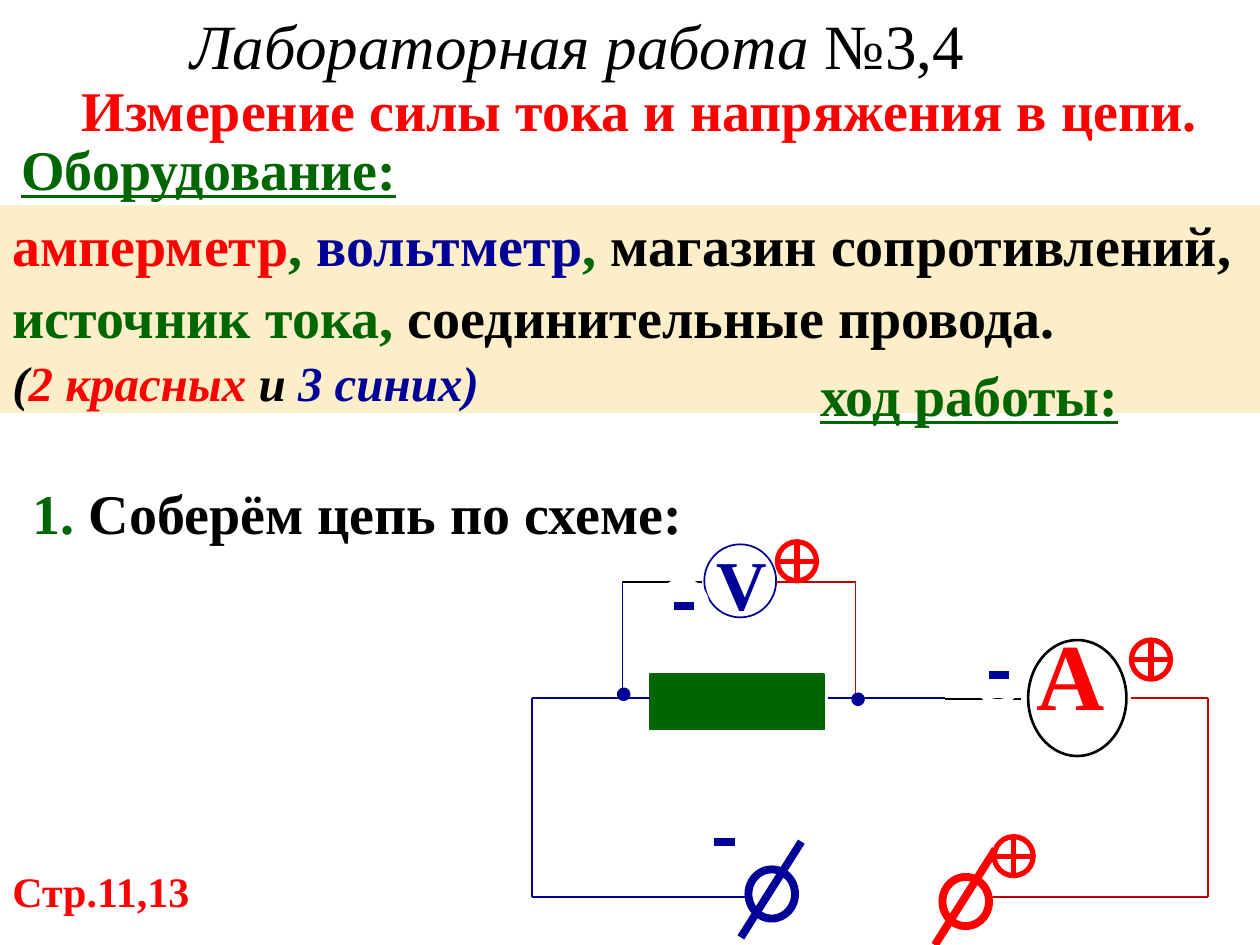
from pptx import Presentation
from pptx import util as u
from pptx.dml.color import RGBColor
from pptx.enum import shapes, text
from pptx.oxml.ns import qn
from lxml import etree

FONT = "Times New Roman"
COLORS = {"black": "000000", "white": "FFFFFF", "red": "FF0000", "wire": "C00000",
          "green": "006600", "blue": "000099", "cream": "FBEEC9"}
OVAL = shapes.MSO_SHAPE.OVAL
RECT = shapes.MSO_SHAPE.RECTANGLE


def color(name):
    return RGBColor.from_string(COLORS[name])


def add_runs(para, runs, size, bold=True, italic=False, underline=False):
    """Add (words, colour) pairs as runs of one style."""
    for words, name in runs:
        span = para.add_run()
        span.text = words
        font = span.font
        font.name, font.size = FONT, u.Pt(size)
        font.bold, font.italic, font.underline = bold, italic, underline
        font.color.rgb = color(name)


def add_label(page, box, runs, size, wrap=False, **style):
    label = page.shapes.add_textbox(*map(u.Inches, box))
    label.text_frame.word_wrap = wrap
    add_runs(label.text_frame.paragraphs[0], runs, size, **style)


def add_figure(page, kind, box, fill=None, line=None, width=1):
    figure = page.shapes.add_shape(kind, *map(u.Inches, box))
    figure.shadow.inherit = False
    if fill:
        figure.fill.solid()
        figure.fill.fore_color.rgb = color(fill)
    else:
        figure.fill.background()
    if line:
        figure.line.color.rgb = color(line)
        figure.line.width = u.Pt(width)
    else:
        figure.line.fill.background()
    return figure


def add_wire(page, start, end, name, width=1):
    wire = page.shapes.add_connector(
        shapes.MSO_CONNECTOR.STRAIGHT, *map(u.Inches, (*start, *end)))
    wire.line.color.rgb = color(name)
    wire.line.width = u.Pt(width)
    etree.SubElement(wire._element.spPr, qn("a:effectLst"))


def add_title(page, box):
    title = page.shapes.title
    title.left, title.top, title.width, title.height = map(u.Inches, box)
    frame = title.text_frame
    frame.word_wrap = False
    frame.auto_size = text.MSO_AUTO_SIZE.NONE
    frame.vertical_anchor = text.MSO_ANCHOR.TOP
    para = frame.paragraphs[0]
    para.alignment = text.PP_ALIGN.LEFT
    add_runs(para, [("Лабораторная работа ", "black")], 36, bold=False, italic=True)
    add_runs(para, [("№3,4", "black")], 36, bold=False)


def add_equipment(page, box):
    frame = add_figure(page, RECT, box, "cream").text_frame
    frame.word_wrap = True
    frame.vertical_anchor = text.MSO_ANCHOR.MIDDLE
    devices, wires = frame.paragraphs[0], frame.add_paragraph()
    for para in (devices, wires):
        para.alignment = text.PP_ALIGN.LEFT
        para.line_spacing = 1.06
    add_runs(devices, [("амперметр", "red"), (", ", "green"), ("вольтметр", "blue"),
                       (", ", "green"), ("магазин сопротивлений, ", "black"),
                       ("источник тока, ", "green"),
                       ("соединительные провода.", "black")], 32)
    add_runs(wires, [("(", "black"), ("2 красных", "red"), (" и ", "black"),
                     ("3 синих)", "blue")], 28, italic=True)


def add_plus(page, left, top):
    add_figure(page, shapes.MSO_SHAPE.FLOWCHART_OR, (left, top, 0.31, 0.31),
               "white", "red", 3)


def add_minus(page, left, top):
    """Draw a minus inside a white ring that clears the wire around it."""
    add_wire(page, (left + 0.12, top + 0.2), (left + 0.28, top + 0.2), "blue", 4.5)
    add_figure(page, OVAL, (left, top, 0.38, 0.41), line="white", width=3)


def add_terminal(page, left, top, name):
    add_figure(page, OVAL, (left + 0.06, top + 0.22, 0.37, 0.39), "white", name, 4.5)
    add_wire(page, (left, top + 0.76), (left + 0.48, top), name, 4.5)


def add_main_loop(page, box):
    """Draw the resistor, ammeter and source around the loop's outline."""
    left, top, width, height = box
    right, bottom = left + width, top + height
    add_figure(page, RECT, (left + 0.94, top - 0.19, 1.38, 0.44), "green", "green")
    add_label(page, (left + 3.91, top - 0.7, 1.5, 1.0), [("А", "red")], 54)
    add_figure(page, OVAL, (left + 3.94, top - 0.46, 0.78, 0.92), line="black", width=1.5)
    for start, end, name in [
            ((left, top), (left + 0.94, top), "blue"),
            ((left + 2.35, top), (left + 3.28, top), "blue"),
            ((left + 3.28, top + 0.01), (left + 3.88, top + 0.01), "black"),
            ((left + 4.76, top), (right, top), "wire"),
            ((right, top), (right, bottom), "wire"),
            ((left, top), (left, bottom), "blue"),
            ((left + 3.44, bottom), (right, bottom), "wire"),
            ((left, bottom), (left + 1.93, bottom), "blue")]:
        add_wire(page, start, end, name)
    add_terminal(page, left + 3.2, bottom - 0.38, "red")
    add_terminal(page, left + 1.66, bottom - 0.44, "blue")
    add_plus(page, left + 3.67, bottom - 0.48)
    add_plus(page, left + 4.76, top - 0.46)
    add_minus(page, left + 1.33, bottom - 0.64)
    add_minus(page, left + 3.51, top - 0.38)


def add_voltmeter(page, box):
    """Draw the voltmeter branch, joined to the loop at its two lower corners."""
    left, top, width, height = box
    right, bottom = left + width, top + height
    add_label(page, (left + 0.65, top - 0.38, 0.98, 0.92), [("V", "blue")], 40)
    add_figure(page, OVAL, (left + 0.65, top - 0.3, 0.57, 0.58), line="blue")
    for start, end, name in [
            ((left + 1.22, top), (right, top), "wire"),
            ((left, top), (left + 0.63, top), "black"),
            ((left, top), (left, bottom), "blue"),
            ((right, top), (right, bottom), "wire")]:
        add_wire(page, start, end, name)
    for node in ((left - 0.03, bottom - 0.09), (right - 0.02, bottom - 0.05)):
        add_figure(page, OVAL, (*node, 0.08, 0.08), "blue", "blue", 2)
    add_plus(page, left + 1.23, top - 0.32)
    add_minus(page, left + 0.29, top - 0.01)


def main():
    deck = Presentation()
    deck.slide_width, deck.slide_height = u.Inches(10), u.Inches(7.5)
    page = deck.slides.add_slide(deck.slide_layouts[5])
    add_title(page, (1.41, 0, 6.4, 0.71))
    add_label(page, (0.55, 0.55, 9.27, 0.64),
              [("Измерение силы тока и напряжения в цепи.", "red")], 32)
    add_label(page, (0.07, 1.02, 3.21, 0.64), [("Оборудование:", "green")], 32,
              underline=True)
    add_equipment(page, (0, 1.63, 10, 1.65))
    add_label(page, (6.41, 2.81, 2.59, 0.64), [("ход работы:", "green")], 32,
              underline=True)
    add_label(page, (0.16, 3.75, 5.41, 0.64),
              [("1. ", "green"), ("Соберём цепь по схеме:", "black")], 32)
    add_main_loop(page, (4.22, 5.54, 5.37, 1.58))
    add_voltmeter(page, (4.94, 4.62, 1.85, 0.94))
    add_label(page, (0, 6.82, 1.77, 0.5), [("Стр.11,13", "red")], 24, wrap=True)
    deck.save("out.pptx")


if __name__ == "__main__":
    main()
